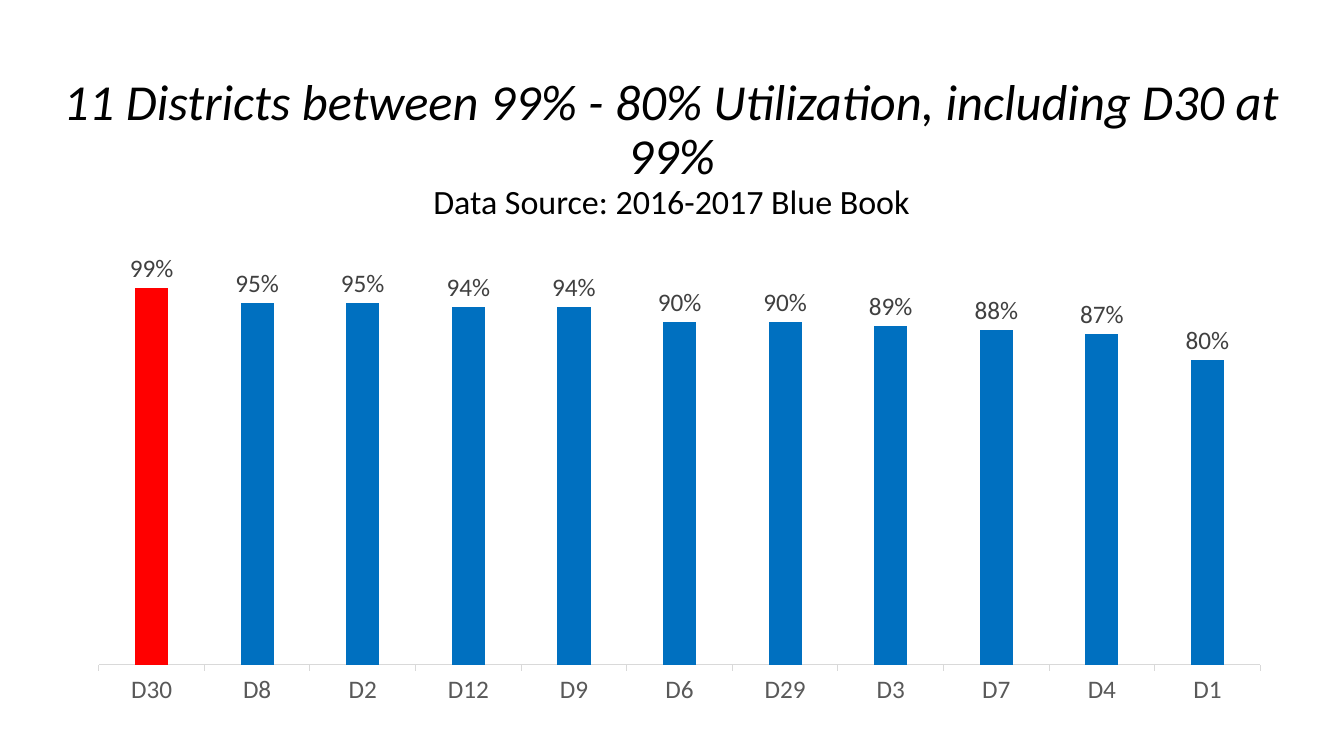
from dataclasses import dataclass

import pptx
import pptx.chart.data
import pptx.dml.color
import pptx.enum.chart
import pptx.enum.text
import pptx.util

Inches = pptx.util.Inches
Pt = pptx.util.Pt
RGB = pptx.dml.color.RGBColor.from_string


@dataclass(frozen=True)
class Theme:
    """Fonts, type sizes and colours of the slide."""
    font: str = "Calibri"
    title_size: float = 36
    source_size: float = 24.3
    chart_size: float = 18
    text: str = "000000"
    bar: str = "0070C0"
    highlight: str = "FF0000"
    axis_text: str = "595959"
    axis_line: str = "D9D9D9"
    label_text: str = "404040"


THEME = Theme()

HEADING = "11 Districts between 99% - 80% Utilization, including D30 at 99%"
SOURCE = "Data Source: 2016-2017 Blue Book"
UTILIZATION = {
    "D30": 0.99, "D8": 0.95, "D2": 0.95, "D12": 0.94, "D9": 0.94, "D6": 0.9,
    "D29": 0.9, "D3": 0.89, "D7": 0.88, "D4": 0.87, "D1": 0.8,
}


def style_font(font, size, color):
    """Apply the theme font with a size and colour."""
    font.name = THEME.font
    font.size = Pt(size)
    font.color.rgb = RGB(color)


def add_title(slide, left, top, width, height):
    """Fill the title placeholder with the heading and its data source."""
    title = slide.shapes.title
    title.left, title.top = Inches(left), Inches(top)
    title.width, title.height = Inches(width), Inches(height)
    tf = title.text_frame
    tf.word_wrap = True
    tf.auto_size = pptx.enum.text.MSO_AUTO_SIZE.NONE
    tf.vertical_anchor = pptx.enum.text.MSO_ANCHOR.TOP
    tf.margin_top = Inches(0.25)
    tf.text = f"{HEADING}\n{SOURCE}"
    styles = ((THEME.title_size, True), (THEME.source_size, False))
    for p, (size, italic) in zip(tf.paragraphs, styles):
        p.alignment = pptx.enum.text.PP_ALIGN.CENTER
        p.line_spacing = 0.9
        p.space_before = Pt(0)
        r = p.runs[0]
        style_font(r.font, size, THEME.text)
        r.font.italic = italic


def add_utilization_chart(slide, left, top, width, height):
    """Draw district utilization as columns with the first one highlighted."""
    data = pptx.chart.data.CategoryChartData(number_format="0%")
    data.categories = list(UTILIZATION)
    data.add_series("Series 1", list(UTILIZATION.values()))
    chart = slide.shapes.add_chart(
        pptx.enum.chart.XL_CHART_TYPE.COLUMN_CLUSTERED,
        Inches(left), Inches(top), Inches(width), Inches(height), data,
    ).chart
    chart.has_legend = False
    chart.has_title = False
    style_font(chart.font, THEME.chart_size, THEME.text)

    value_axis = chart.value_axis
    value_axis.minimum_scale = 0
    value_axis.maximum_scale = 1.2
    value_axis.has_major_gridlines = False
    value_axis.visible = False

    category_axis = chart.category_axis
    category_axis.major_tick_mark = pptx.enum.chart.XL_TICK_MARK.OUTSIDE
    style_font(category_axis.tick_labels.font, THEME.chart_size, THEME.axis_text)
    category_axis.format.line.color.rgb = RGB(THEME.axis_line)
    category_axis.format.line.width = Pt(0.75)

    plot = chart.plots[0]
    plot.gap_width = 219
    plot.overlap = -27
    plot.vary_by_categories = False
    series = plot.series[0]
    series.invert_if_negative = False
    for part, color in ((series, THEME.bar), (series.points[0], THEME.highlight)):
        part.format.fill.solid()
        part.format.fill.fore_color.rgb = RGB(color)

    labels = series.data_labels
    labels.show_value = True
    labels.number_format = "0%"
    labels.number_format_is_linked = False
    labels.position = pptx.enum.chart.XL_LABEL_POSITION.OUTSIDE_END
    style_font(labels.font, THEME.chart_size, THEME.label_text)


def main():
    """Build and save the presentation."""
    prs = pptx.Presentation()
    prs.slide_width, prs.slide_height = Inches(13.33), Inches(7.5)
    slide = prs.slides.add_slide(prs.slide_layouts.get_by_name("Title Only"))
    add_title(slide, 0.1, 0.51, 13.12, 1.45)
    add_utilization_chart(slide, 0.74, 1.96, 12, 5.14)
    prs.save("out.pptx")


if __name__ == "__main__":
    main()
